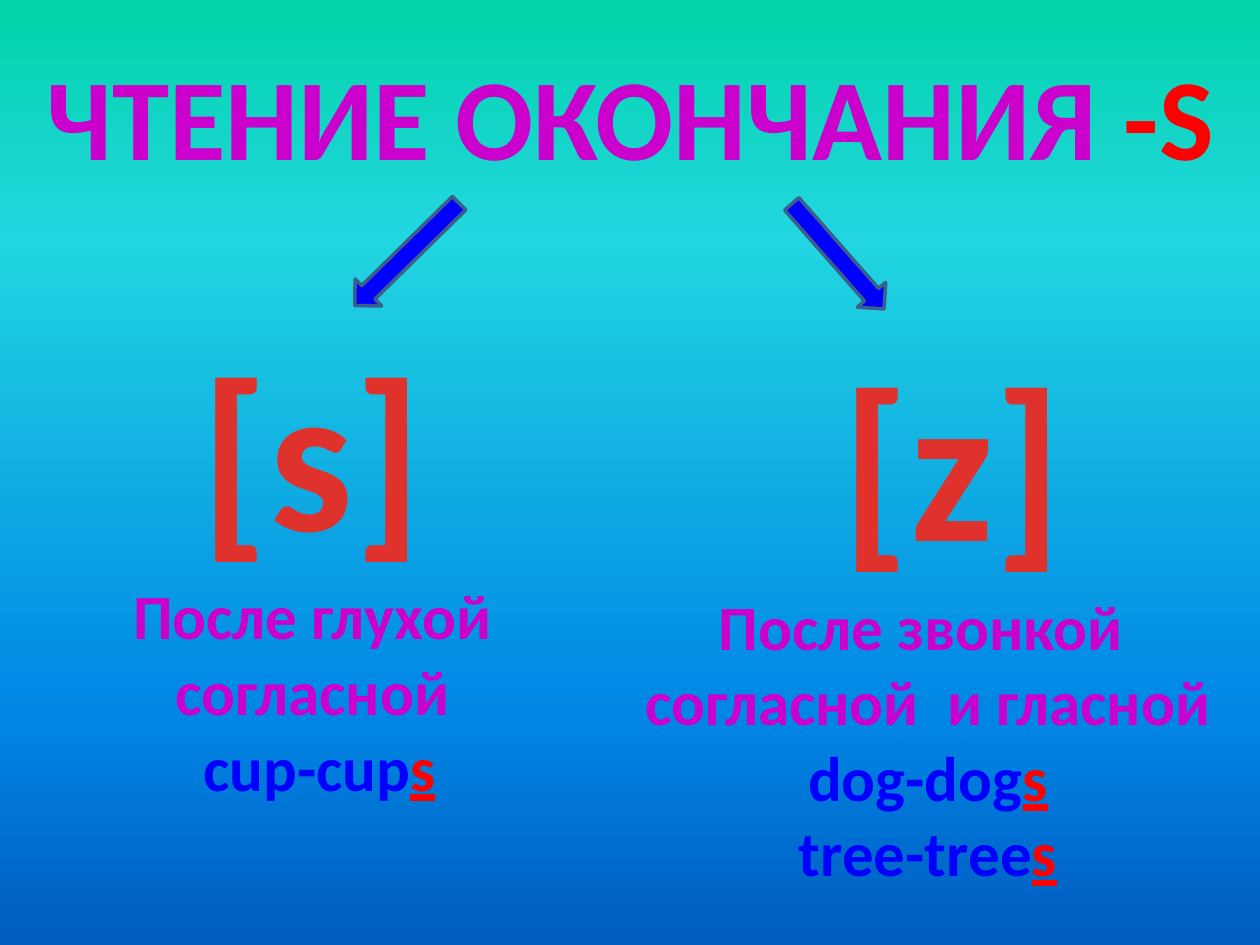
from lxml.etree import SubElement
from pptx import Presentation
from pptx.dml.color import RGBColor
from pptx.enum.shapes import MSO_SHAPE
from pptx.enum.text import MSO_ANCHOR, MSO_AUTO_SIZE, PP_ALIGN
from pptx.oxml.ns import qn
from pptx.util import Inches, Pt

PURPLE, BLUE, RED = "CC00CC", "0000FF", "FF0000"
SKY = [(0, "03D4A8"), (25, "21D6E0"), (75, "0087E6"), (100, "005CBF")]
SOUND_RED = [(25, "E0322D"), (100, "A2201C")]


def fill_downwards(fill, owner, stops):
    """Give fill a top-to-bottom gradient; owner is the XML element that holds it."""
    fill.gradient()
    fill.gradient_angle = 270
    stop_list = next(owner.iter(qn("a:gsLst")))
    stop_list.clear()
    for percent, color in stops:
        stop = SubElement(stop_list, qn("a:gs"), pos=str(percent * 1000))
        SubElement(stop, qn("a:srgbClr"), val=color)


def write(frame, lines, size, wrap=False):
    """Write centred bold lines, each a list of (text, colour or gradient, underline)."""
    frame.word_wrap = wrap
    frame.auto_size = MSO_AUTO_SIZE.SHAPE_TO_FIT_TEXT
    for index, line in enumerate(lines):
        paragraph = frame.add_paragraph() if index else frame.paragraphs[0]
        paragraph.alignment = PP_ALIGN.CENTER
        for text, color, underline in line:
            run = paragraph.add_run()
            run.text = text
            font_format = {"name": "Calibri", "size": Pt(size), "bold": True, "underline": underline}
            for name, value in font_format.items():
                setattr(run.font, name, value)
            if isinstance(color, str):
                run.font.color.rgb = RGBColor.from_string(color)
            else:
                properties = run.font.fill
                fill_downwards(properties, run._r, color)
                run._r.get_or_add_rPr().set("spc", "50")


presentation = Presentation()
presentation.slide_width, presentation.slide_height = Inches(10), Inches(7.5)
slide = presentation.slides.add_slide(presentation.slide_layouts[5])
fill_downwards(slide.background.fill, slide.element, SKY)

title = slide.shapes.title
title.left, title.top, title.width, title.height = map(Inches, (0, 0.31, 10, 1.21))
title.text_frame.vertical_anchor = MSO_ANCHOR.TOP
write(title.text_frame, [[("ЧТЕНИЕ ОКОНЧАНИЯ ", PURPLE, None), ("-S", RED, None)]], 66, wrap=True)

# Per ending: arrow box and angle, sound and its box, rule and its box, example words
endings = [
    ((3.08, 1.44, 0.3, 1.16), 45.5, "[s]", (1.48, 2.5, 1.99, 2.12),
     ["После глухой ", "согласной "], (0.94, 4.53, 3.19, 1.92), ["cup-cup"]),
    ((6.5, 1.48, 0.3, 1.11), 318.7, "[z]", (6.56, 2.58, 1.99, 2.12),
     ["После звонкой ", "согласной  и гласной"], (5, 4.61, 4.73, 2.52), ["dog-dog", "tree-tree"]),
]
for arrow_box, angle, sound, sound_box, rule, rule_box, words in endings:
    arrow = slide.shapes.add_shape(MSO_SHAPE.DOWN_ARROW, *map(Inches, arrow_box))
    arrow.rotation = angle
    arrow.shadow.inherit = False
    arrow.fill.solid()
    arrow.fill.fore_color.rgb = RGBColor.from_string(BLUE)
    arrow.line.color.rgb = RGBColor.from_string("3A5F8C")
    arrow.line.width = Pt(2)

    sound_text = slide.shapes.add_textbox(*map(Inches, sound_box))
    write(sound_text.text_frame, [[(sound, SOUND_RED, None)]], 120)

    rule_lines = [[(text, PURPLE, None)] for text in rule]
    word_lines = [[(word, BLUE, None), ("s", RED, True)] for word in words]
    rule_text = slide.shapes.add_textbox(*map(Inches, rule_box))
    write(rule_text.text_frame, rule_lines + word_lines, 36)

presentation.save("out.pptx")
